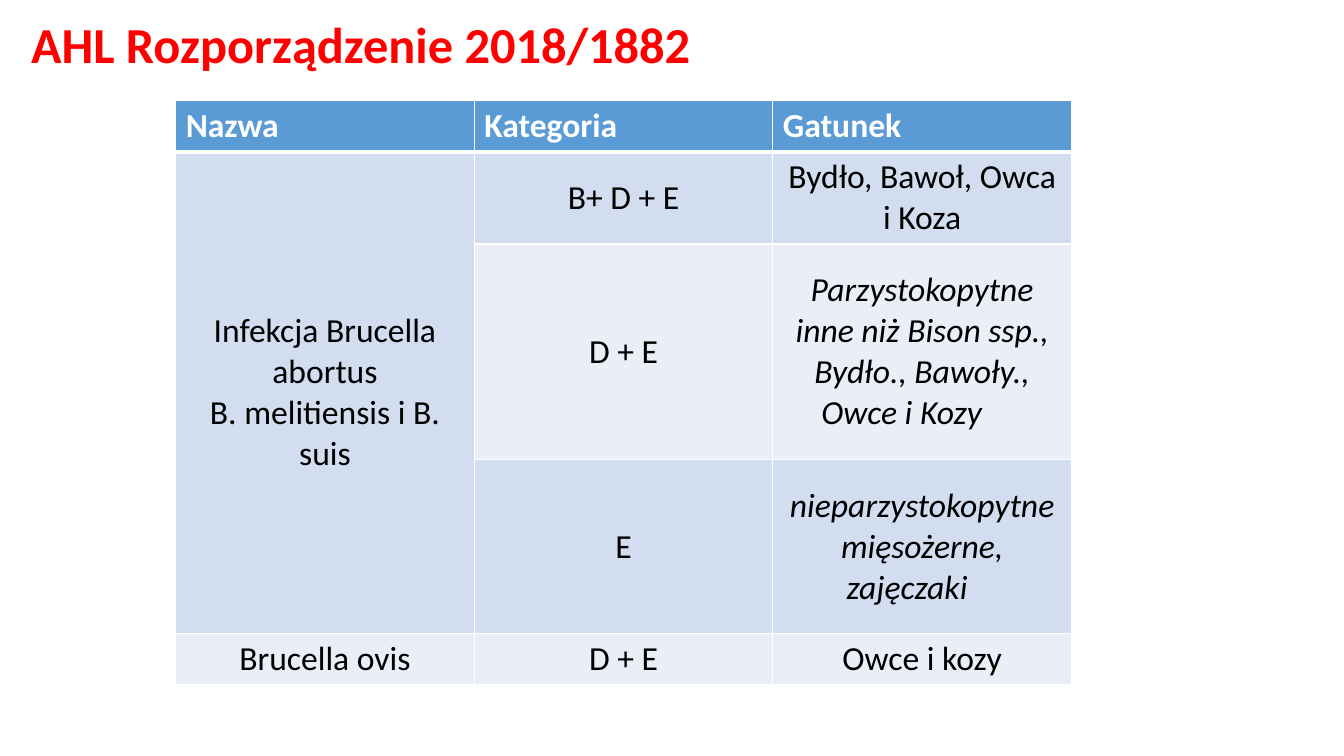
from lxml import etree
from pptx import Presentation
from pptx.dml.color import RGBColor
from pptx.enum.text import MSO_ANCHOR, PP_ALIGN
from pptx.oxml.ns import qn
from pptx.util import Pt

MIDDLE, TOP = MSO_ANCHOR.MIDDLE, MSO_ANCHOR.TOP
CENTER, LEFT = PP_ALIGN.CENTER, PP_ALIGN.LEFT

TITLE = "AHL Rozporządzenie 2018/1882"
ROWS = [
    ("Nazwa", "Kategoria", "Gatunek"),
    ("Infekcja Brucella abortus\nB. melitiensis i B. suis", "B+ D + E",
     "Bydło, Bawoł, Owca i Koza"),
    ("", "D + E",
     "Parzystokopytne inne niż Bison ssp., Bydło., Bawoły., Owce i Kozy\t"),
    ("", "E", "nieparzystokopytnemięsożerne, zajęczaki\t"),
    ("Brucella ovis", "D + E", "Owce i kozy"),
]
HEIGHTS = [36.5, 65, 154, 124.5, 36.5]
WIDTH = 213.3
ITALIC = {(2, 2), (3, 2)}
HEAD, BANDS = "5B9BD5", ("EAEFF7", "D2DEEF")


def color(code):
    return RGBColor.from_string(code)


def style(par, size, code, bold=False, italic=False):
    font = par.font
    font.name, font.size = "Calibri", Pt(size)
    font.bold, font.italic = bold, italic
    font.color.rgb = color(code)


def border(cell, row):
    """Draw white cell edges, thicker between the header and the body."""
    props = cell._tc.get_or_add_tcPr()
    thick = {(0, "B"), (1, "T")}
    for i, side in enumerate("LRTB"):
        width = Pt(3 if (row, side) in thick else 1)
        line = etree.Element(qn("a:ln" + side), w=str(width))
        fill = etree.SubElement(line, qn("a:solidFill"))
        etree.SubElement(fill, qn("a:srgbClr"), val="FFFFFF")
        props.insert(i, line)


deck = Presentation()
deck.slide_width, deck.slide_height = Pt(960), Pt(540)
slide = deck.slides.add_slide(deck.slide_layouts[5])

title = slide.shapes.title
title.left, title.top, title.width, title.height = Pt(15), Pt(14), Pt(863), Pt(40)
title.text_frame.text = TITLE
title.text_frame.vertical_anchor = MIDDLE
head = title.text_frame.paragraphs[0]
head.alignment, head.line_spacing = LEFT, 0.9
style(head, 36, "FF0000", bold=True)

cols = len(ROWS[0])
table = slide.shapes.add_table(len(ROWS), cols, Pt(125.5), Pt(72),
                               Pt(WIDTH * cols), Pt(sum(HEIGHTS))).table
for col in table.columns:
    col.width = Pt(WIDTH)
for r, texts in enumerate(ROWS):
    table.rows[r].height = Pt(HEIGHTS[r])
    for c, text in enumerate(texts):
        cell = table.cell(r, c)
        cell.text = text
        cell.vertical_anchor = MIDDLE if r else TOP
        cell.fill.solid()
        cell.fill.fore_color.rgb = color(BANDS[r % 2] if r else HEAD)
        border(cell, r)
        for par in cell.text_frame.paragraphs:
            par.alignment = CENTER if r else LEFT
            style(par, 24, "000000" if r else "FFFFFF", not r, (r, c) in ITALIC)
table.cell(1, 0).merge(table.cell(3, 0))

deck.save("out.pptx")
